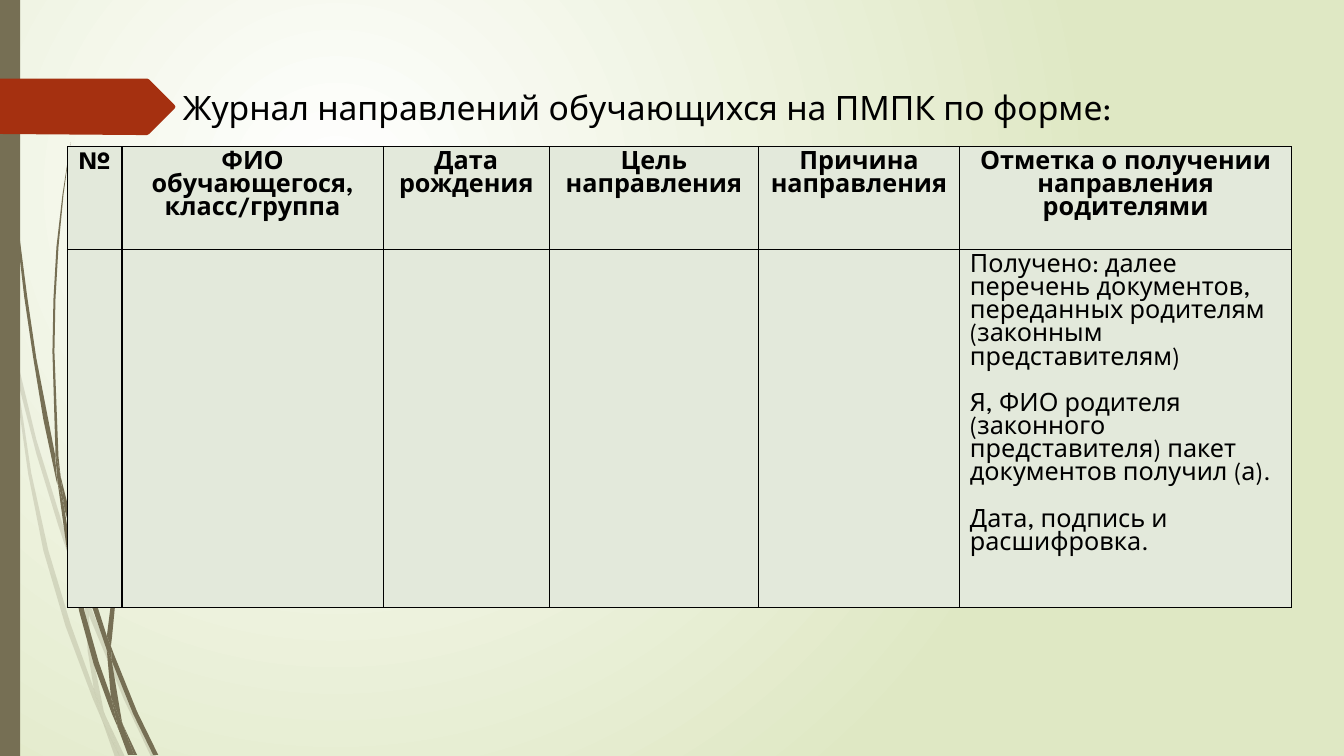
from lxml import etree
from pptx import Presentation
from pptx.dml.color import RGBColor
from pptx.enum.shapes import MSO_SHAPE
from pptx.enum.text import MSO_ANCHOR, MSO_AUTO_SIZE, PP_ALIGN
from pptx.oxml.ns import qn
from pptx.util import Inches, Pt

RECT = MSO_SHAPE.RECTANGLE
LEFT, CENTER = PP_ALIGN.LEFT, PP_ALIGN.CENTER
TOP, NO_FIT = MSO_ANCHOR.TOP, MSO_AUTO_SIZE.NONE

FONT = "League Spartan"
BLACK, OLIVE, RED = "000000", "766F54", "A53010"
CELL, PALE, WHITE = "E3E9DB", "DFE8C4", "FFFFFF"
HUNDREDTH = Inches(0.01)

# Outlines of the grass blades, in hundredths of an inch
FAINT_BLADES = [
    [(11, 350), (9, 322), (0, 282), (0, 299), (10, 344)],
    [(58, 522), (84, 599), (85, 586), (62, 520), (36, 436), (14, 345),
     (17, 376), (36, 450)],
    [(92, 607), (88, 596), (88, 610), (123, 694), (150, 751), (155, 751),
     (127, 692)],
    [(119, 751), (124, 751), (105, 711)],
    [(93, 683), (70, 619), (48, 546), (31, 469), (17, 376), (11, 350),
     (28, 470), (43, 546), (65, 621), (92, 693), (101, 714), (99, 707)],
    [(84, 599), (87, 646), (93, 683), (96, 692), (105, 711), (103, 706),
     (91, 646), (88, 610), (88, 608)],
    [(88, 584), (94, 522), (110, 462), (131, 405), (160, 349), (192, 295),
     (229, 245), (268, 198), (290, 175), (312, 154), (312, 153), (289, 175),
     (268, 197), (228, 244), (190, 294), (158, 348), (128, 404), (107, 461),
     (91, 522), (85, 584), (85, 586), (88, 596)],
    [(101, 714), (114, 751), (119, 751)],
    [(88, 608), (88, 610), (88, 596), (85, 586), (84, 599)],
    [(96, 692), (93, 683), (99, 707), (101, 714), (119, 751), (105, 711)],
]
DARK_BLADES = [
    [(7, 110), (17, 233), (24, 294), (33, 355), (43, 416), (56, 477),
     (57, 481), (55, 457), (55, 453), (36, 355), (27, 294), (19, 232),
     (8, 109), (5, 48), (4, 0), (3, 0), (4, 48)],
    [(88, 592), (106, 645), (106, 631), (93, 590), (75, 532), (60, 472),
     (64, 505)],
    [(113, 649), (110, 641), (111, 656), (132, 708), (152, 749), (157, 749),
     (136, 706)],
    [(110, 691), (98, 657), (84, 607), (72, 556), (64, 505), (57, 477),
     (68, 557), (79, 608), (93, 659), (111, 708), (117, 722), (116, 717)],
    [(60, 472), (58, 453), (54, 349), (55, 297), (58, 245), (63, 193),
     (70, 141), (62, 193), (56, 245), (53, 297), (52, 349), (55, 449)],
    [(133, 749), (136, 749), (122, 719)],
    [(57, 477), (64, 505), (60, 472), (55, 449), (55, 453)],
    [(111, 633), (115, 592), (125, 552), (140, 513), (158, 476), (180, 440),
     (205, 406), (231, 374), (245, 359), (261, 344), (260, 344), (245, 358),
     (231, 373), (204, 405), (178, 439), (156, 474), (137, 512), (122, 551),
     (111, 591), (106, 631), (110, 641)],
    [(117, 722), (127, 749), (131, 749)],
    [(106, 645), (110, 691), (116, 706), (122, 719), (121, 716), (111, 656),
     (109, 651)],
    [(106, 645), (109, 651), (111, 656), (110, 641), (106, 631)],
    [(116, 706), (110, 691), (116, 717), (117, 722), (130, 749), (133, 749),
     (122, 719)],
]
ARROW = [(173, 108), (148, 133), (146, 134), (136, 134), (0, 133), (0, 78),
         (146, 78), (148, 79), (173, 104), (174, 106)]

HEADERS = ["№", "ФИО\nобучающегося,\nкласс/группа", "Дата рождения",
           "Цель направления", "Причина направления",
           "Отметка о получении направления родителями"]
RECEIPT = "\n".join([
    "Получено: далее перечень документов, переданных родителям "
    "(законным представителям)",
    "Я, ФИО родителя (законного представителя) пакет документов получил (а).",
    "Дата, подпись и расшифровка."])
COLUMN_SHARES = [4.05, 19.43, 12.38, 15.53, 15, 24.68]
ROW_SHARES = [13.6, 47.4]


def rgb(value):
    return RGBColor.from_string(value)


class SlideBuilder:
    """Places elements by percentages of the slide's width and height."""

    def __init__(self, prs):
        self.prs = prs
        self.s = prs.slides.add_slide(prs.slide_layouts[5])

    def x(self, share):
        return round(self.prs.slide_width * share / 100)

    def y(self, share):
        return round(self.prs.slide_height * share / 100)

    def box(self, left, top, width, height):
        return self.x(left), self.y(top), self.x(width), self.y(height)

    def background(self, inner, outer):
        fill = self.s.background.fill
        fill.gradient()
        for stop, color in zip(fill.gradient_stops, (inner, outer)):
            stop.color.rgb = rgb(color)
        grad = self.s.background._cSld.find(".//" + qn("a:gradFill"))
        grad.remove(grad.find(qn("a:lin")))
        circle = etree.SubElement(grad, qn("a:path"), path="circle")
        etree.SubElement(circle, qn("a:fillToRect"),
                         l="50000", t="50000", r="100000", b="100000")

    def paint(self, sp, color, alpha=None):
        sp.shadow.inherit = False
        sp.fill.solid()
        sp.fill.fore_color.rgb = rgb(color)
        sp.line.fill.background()
        if alpha:
            clr = sp._element.spPr.find(qn("a:solidFill"))[0]
            etree.SubElement(clr, qn("a:alpha"), val=str(alpha * 1000))

    def rectangle(self, color, *shares):
        self.paint(self.s.shapes.add_shape(RECT, *self.box(*shares)), color)

    def outline(self, points, color, alpha=None):
        fb = self.s.shapes.build_freeform(*points[0], scale=HUNDREDTH)
        fb.add_line_segments(points[1:], close=True)
        self.paint(fb.convert_to_shape(), color, alpha)

    def style(self, p, size, bold, align):
        p.alignment = align
        for r in p.runs:
            r.font.name, r.font.size, r.font.bold = FONT, Pt(size), bold
            r.font.color.rgb = rgb(BLACK)

    def title(self, text, *shares):
        sp = self.s.shapes.title
        sp.left, sp.top, sp.width, sp.height = self.box(*shares)
        tf = sp.text_frame
        tf.text = text
        tf.word_wrap, tf.auto_size, tf.vertical_anchor = True, NO_FIT, TOP
        tf.margin_left = Inches(0.48)
        p = tf.paragraphs[0]
        p.space_before = Pt(10)
        self.style(p, 24, False, LEFT)

    def cell(self, cell, text, bold, align, gap):
        tcPr = cell._tc.get_or_add_tcPr()
        for side in ("a:lnL", "a:lnR", "a:lnT", "a:lnB"):
            ln = etree.SubElement(tcPr, qn(side), w=str(Pt(1)))
            fill = etree.SubElement(ln, qn("a:solidFill"))
            etree.SubElement(fill, qn("a:srgbClr"), val=BLACK)
        cell.fill.solid()
        cell.fill.fore_color.rgb = rgb(CELL)
        cell.text = text
        for i, p in enumerate(cell.text_frame.paragraphs):
            p.space_before = Pt(gap if i else 0)
            self.style(p, 18, bold, align)

    def table(self, left, top, columns, rows, headers, body):
        shares = (left, top, sum(columns), sum(rows))
        table = self.s.shapes.add_table(
            len(rows), len(columns), *self.box(*shares)).table
        table.first_row = table.horz_banding = False
        for column, share in zip(table.columns, columns):
            column.width = self.x(share)
        for row, share in zip(table.rows, rows):
            row.height = self.y(share)
        for i, text in enumerate(headers):
            self.cell(table.cell(0, i), text, True, CENTER, 0)
        for i, text in enumerate(body):
            self.cell(table.cell(1, i), text, False, LEFT, 16.5)


def main():
    prs = Presentation()
    prs.slide_width, prs.slide_height = Inches(13.33), Inches(7.5)
    slide = SlideBuilder(prs)

    # Backdrop: gradient, grass blades, side bar and arrow
    slide.background(WHITE, PALE)
    for blade in FAINT_BLADES:
        slide.outline(blade, OLIVE, 20)
    for blade in DARK_BLADES:
        slide.outline(blade, OLIVE)
    slide.rectangle(OLIVE, 0, 0, 1.5, 100)
    slide.outline(ARROW, RED)

    # Heading and referral journal
    slide.title("Журнал направлений обучающихся на ПМПК по форме:",
                10, 10.8, 88.6, 17.1)
    body = [""] * (len(HEADERS) - 1) + [RECEIPT]
    slide.table(5.03, 19.4, COLUMN_SHARES, ROW_SHARES, HEADERS, body)

    prs.save("out.pptx")


if __name__ == "__main__":
    main()
